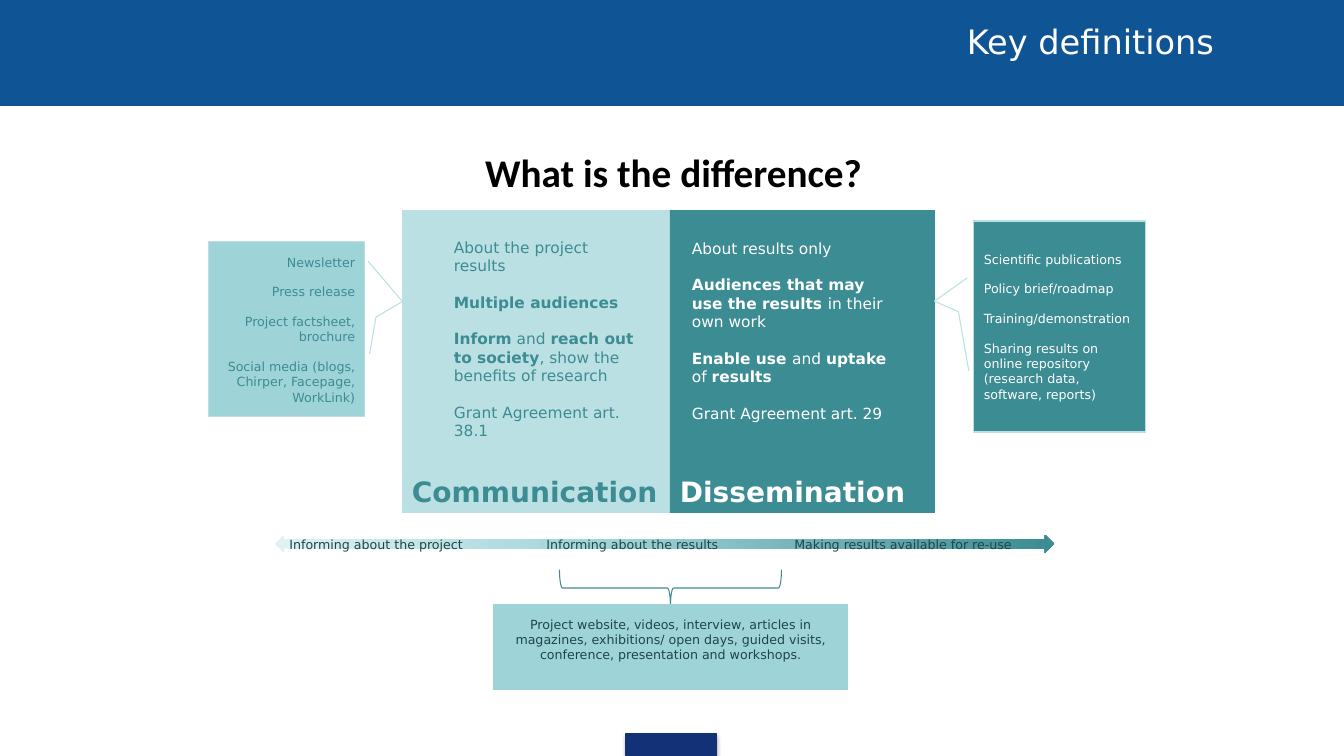
from copy import deepcopy
from lxml.etree import SubElement
from pptx import Presentation
from pptx.dml.color import RGBColor
from pptx.enum.shapes import MSO_SHAPE
from pptx.enum.text import MSO_ANCHOR, PP_ALIGN
from pptx.oxml.ns import qn
from pptx.util import Emu, Pt

# Content: ** marks the start and end of bold wording
TITLE = "Key definitions"
HEADING = "What is the difference?"
COMMUNICATION = [
    "About the project results",
    "**Multiple audiences**",
    "**Inform** and **reach out to society**, show the benefits of research",
    "Grant Agreement art. 38.1",
]
DISSEMINATION = [
    "About results only",
    "**Audiences that may use the results **in their own work",
    "**Enable use **and **uptake **of **results**",
    "Grant Agreement art. 29",
]
COMMUNICATION_TOOLS = [
    "Newsletter",
    "Press release",
    "Project factsheet, brochure",
    "Social media (blogs, Chirper, Facepage, WorkLink)",
]
DISSEMINATION_TOOLS = [
    "Scientific publications",
    "Policy brief/roadmap",
    "Training/demonstration",
    "Sharing results on online repository (research data, software, reports)",
]
SPECTRUM = [
    "Informing about the project",
    "Informing about the results",
    "Making results available for re-use",
]
SHARED_TOOLS = [
    "Project website, videos, interview, articles in magazines, exhibitions/ open days, "
    "guided visits, conference, presentation and workshops."
]

# Style
BLUE = RGBColor(0x0F, 0x54, 0x94)
NAVY = RGBColor(0x13, 0x31, 0x76)
TEAL = RGBColor(0x3C, 0x8C, 0x93)
DARK_TEAL = RGBColor(0x1E, 0x46, 0x49)
AQUA = RGBColor(0x9E, 0xD3, 0xD7)
PALE = RGBColor(0xBB, 0xE0, 0xE3)
MIST = RGBColor(0xE0, 0xF1, 0xF2)
WHITE = RGBColor(0xFF, 0xFF, 0xFF)
BLACK = RGBColor(0, 0, 0)
FONT = "DejaVu Sans"
LINE_HEIGHT = 1.164
PX = 914400 / 100.8

# Layout in px
WIDTH, HEIGHT = 1344, 756
PANEL_TOP, PANEL_HEIGHT = 210, 303
PANEL_LEFT, PANEL_MIDDLE, PANEL_RIGHT = 402, 670, 935
TAB_STOPS = [257, 505]


def px(length):
    return Emu(round(length * PX))


def add_shape(kind, box, fill=None, line=None):
    shape = page.shapes.add_shape(kind, *map(px, box))
    shape.shadow.inherit = False
    if fill is None:
        shape.fill.background()
    else:
        shape.fill.solid()
        shape.fill.fore_color.rgb = fill
    if line is None:
        shape.line.fill.background()
    else:
        shape.line.color.rgb = line
        shape.line.width = Pt(0.75)
    return shape


def write(shape, lines, size, color, align=PP_ALIGN.LEFT, anchor=MSO_ANCHOR.MIDDLE,
          bold=False, font=FONT, wrap=True):
    frame = shape.text_frame
    frame.word_wrap = wrap
    frame.vertical_anchor = anchor
    for index, line in enumerate(lines):
        para = frame.add_paragraph() if index else frame.paragraphs[0]
        para.alignment = align
        if index:
            para.space_before = Pt(round(size * LINE_HEIGHT, 1))
        para.font.name, para.font.size, para.font.bold = font, Pt(size), bold
        para.font.color.rgb = color
        for part, wording in enumerate(line.split("**")):
            if wording:
                span = para.add_run()
                span.text = wording
                if part % 2:
                    span.font.bold = True


def add_text(box, lines, size, color, **style):
    shape = page.shapes.add_textbox(*map(px, box))
    write(shape, lines, size, color, anchor=MSO_ANCHOR.TOP, **style)


def add_callout(box, fill, points):
    shape = add_shape(MSO_SHAPE.LINE_CALLOUT_3, box, fill, PALE)
    for index, value in enumerate(points):
        shape.adjustments[index] = value
    return shape


deck = Presentation()
deck.slide_width, deck.slide_height = px(WIDTH), px(HEIGHT)
page = deck.slides.add_slide(deck.slide_layouts[6])

# Title band and footer tab
add_shape(MSO_SHAPE.RECTANGLE, (0, 0, WIDTH, 106), BLUE, BLUE)
footer = add_shape(MSO_SHAPE.RECTANGLE, (626, 734, 91, 22), NAVY, NAVY)
effects = footer.element.spPr.find(qn("a:effectLst"))
shadow = SubElement(effects, qn("a:outerShdw"), blurRad=str(Pt(3.1)), dist=str(Pt(1.8)),
                    dir="5400000", rotWithShape="0")
shade = SubElement(shadow, qn("a:srgbClr"), val="000000")
SubElement(shade, qn("a:alpha"), val="35000")
add_text((870, 16, 441, 50), [TITLE], 24, WHITE, align=PP_ALIGN.CENTER)
add_text((452, 143, 443, 57), [HEADING], 28, BLACK, align=PP_ALIGN.CENTER,
         bold=True, font="Calibri", wrap=False)

# Two panels
for name, left, right, fill, color, text_box, lines in [
    ("Communication", PANEL_LEFT, PANEL_MIDDLE, PALE, TEAL, (444, 233, 211, 216), COMMUNICATION),
    ("Dissemination", PANEL_MIDDLE, PANEL_RIGHT, TEAL, WHITE, (682, 234, 216, 196), DISSEMINATION),
]:
    panel = add_shape(MSO_SHAPE.RECTANGLE, (left, PANEL_TOP, right - left, PANEL_HEIGHT), fill)
    write(panel, [name], 20, color, anchor=MSO_ANCHOR.BOTTOM, bold=True)
    add_text(text_box, lines, 11, color)

# Side callouts, leader points as y, x pairs
left_callout = add_callout((209, 242, 156, 175), AQUA,
                           (0.11, 1.02, 0.34, 1.24, 0.43, 1.07, 0.64, 1.03))
write(left_callout, COMMUNICATION_TOOLS, 9, TEAL, align=PP_ALIGN.RIGHT)
right_callout = add_callout((974, 221, 172, 211), TEAL,
                            (0.27, -0.04, 0.38, -0.23, 0.43, -0.09, 0.71, -0.03))
write(right_callout, DISSEMINATION_TOOLS, 9, WHITE)

# Spectrum arrow
arrow = add_shape(MSO_SHAPE.LEFT_RIGHT_ARROW, (275, 535, 779, 18))
arrow.fill.gradient()
arrow.fill.gradient_angle = 0
stop_list = arrow.element.spPr.find(".//" + qn("a:gsLst"))
stop_list.insert(1, deepcopy(stop_list[1]))
for stop, position, color in zip(arrow.fill.gradient_stops, (0, 0.43, 1), (MIST, AQUA, TEAL)):
    stop.position = position
    stop.color.rgb = color
tabs = SubElement(arrow.text_frame.paragraphs[0]._p.get_or_add_pPr(), qn("a:tabLst"))
for position in TAB_STOPS:
    SubElement(tabs, qn("a:tab"), pos=str(px(position)), algn="l")
write(arrow, ["\t".join(SPECTRUM)], 9, DARK_TEAL)

# Brace and shared tools
brace = add_shape(MSO_SHAPE.LEFT_BRACE, (652, 477, 37, 222), line=TEAL)
brace.rotation = 270
shared = add_shape(MSO_SHAPE.RECTANGLE, (493, 604, 355, 86), AQUA)
shared.text_frame.margin_bottom = px(20)
write(shared, SHARED_TOOLS, 9, DARK_TEAL, align=PP_ALIGN.CENTER)

deck.save("out.pptx")
